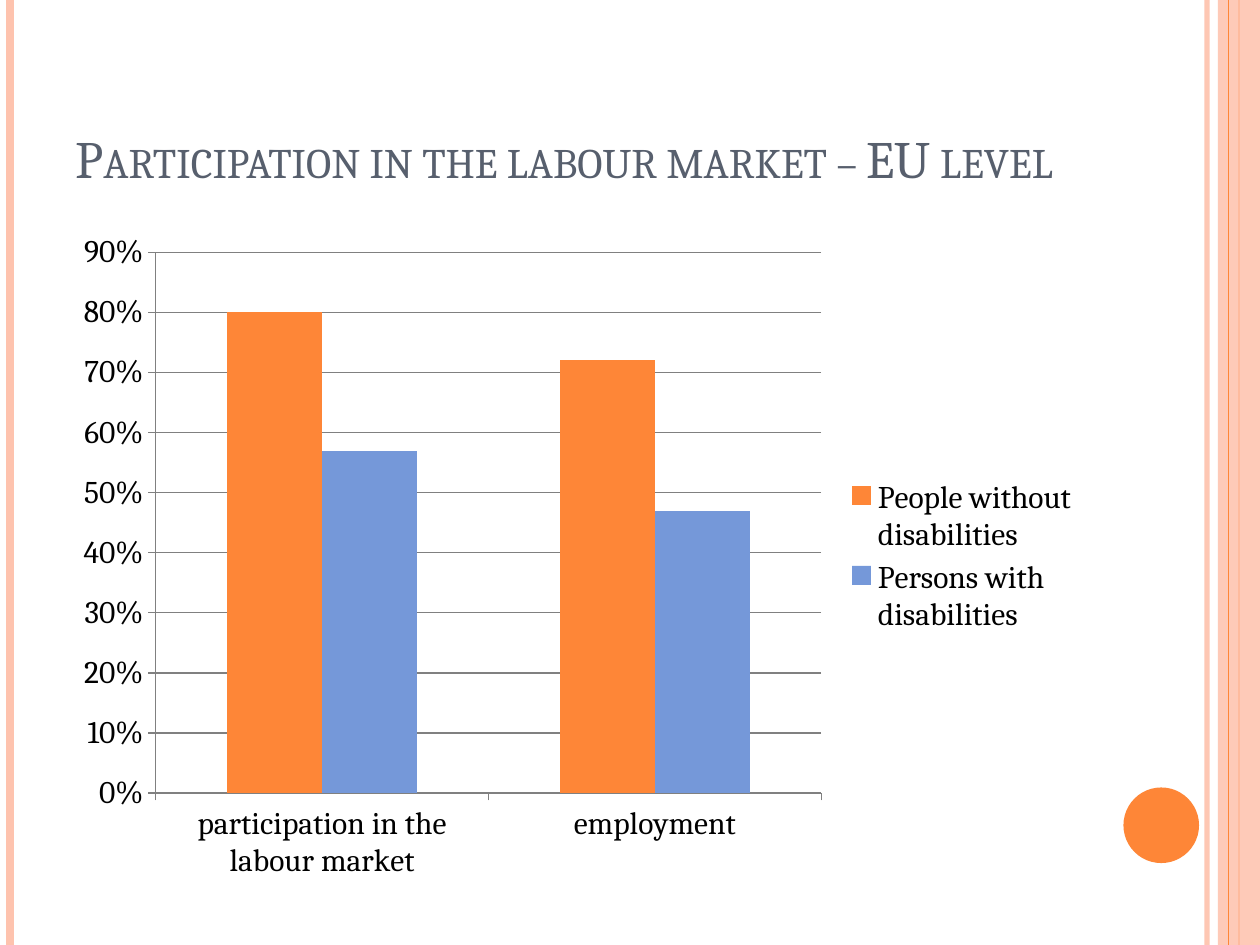
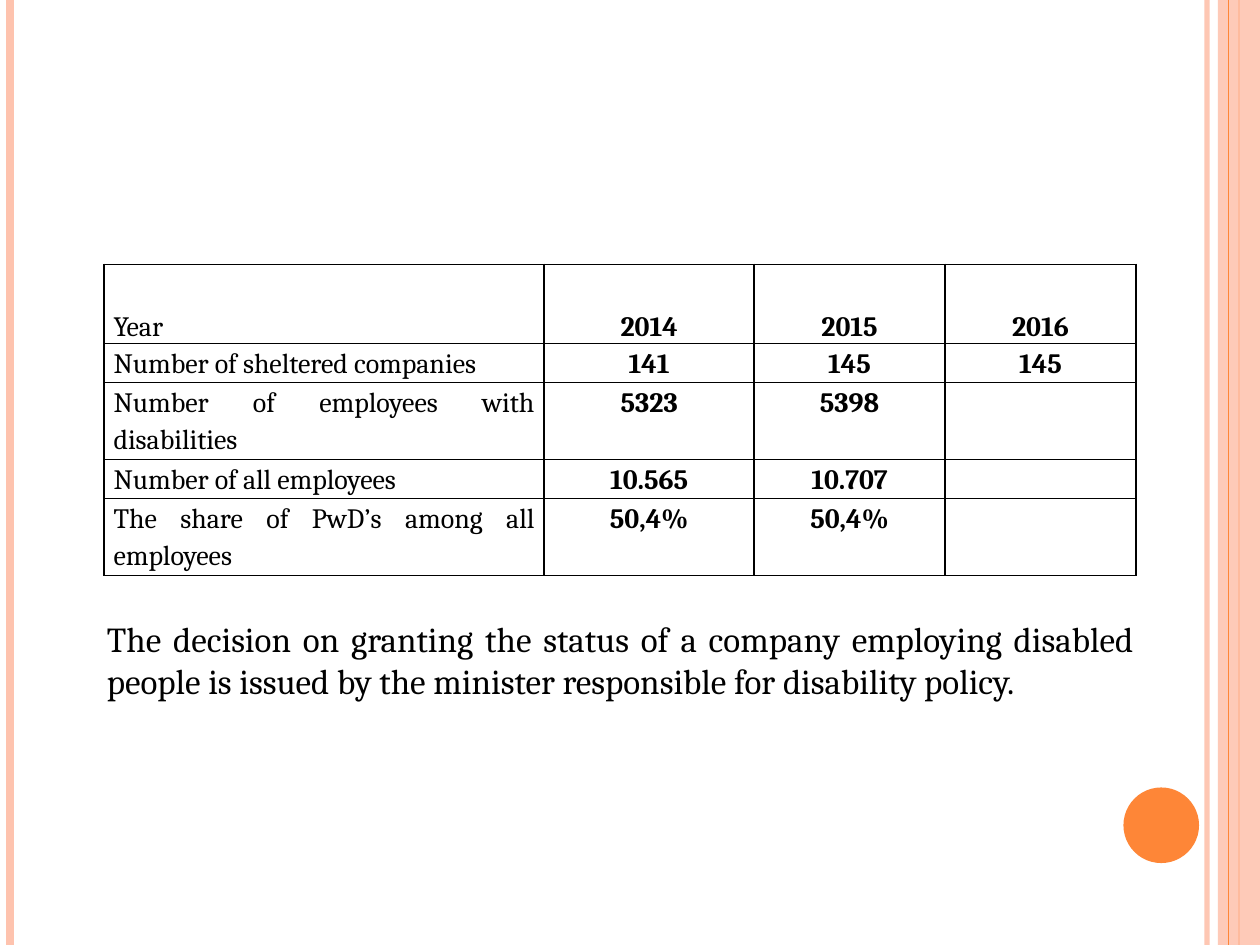
from dataclasses import dataclass
from typing import Any

import lxml.etree
import pptx
import pptx.chart.data
import pptx.dml.color
import pptx.enum.chart
import pptx.enum.shapes
import pptx.enum.text
import pptx.oxml
import pptx.oxml.ns
import pptx.util

Pt = pptx.util.Pt
qn = pptx.oxml.ns.qn
Align = pptx.enum.text.PP_ALIGN
Anchor = pptx.enum.text.MSO_ANCHOR

COLOURS = {
    "orange": "FE8637",
    "peach": "FEC3AE",
    "blue": "7598D9",
    "title": "575F6D",
    "text": "000000",
    "grid": "808080",
    "background": "FFFFFF",
}
FONT = "Cambria"
SLIDE_WIDTH, SLIDE_HEIGHT = 720, 540


@dataclass(frozen=True)
class Stripe:
    """A full-height line at the edge of the slide."""
    x: float
    weight: float
    colour: str
    opacity: int = 100


STRIPES_BEHIND = [
    Stripe(689.75, 3, "peach", 93),
    Stripe(5.75, 4.5, "peach"),
    Stripe(708, 1.5, "orange"),
]
STRIPE_IN_FRONT = Stripe(702, 0.75, "orange")


def rgb(colour: str) -> pptx.dml.color.RGBColor:
    return pptx.dml.color.RGBColor.from_string(COLOURS[colour])


def set_opacity(properties: Any, percent: int) -> None:
    colour = next(properties.iter(qn("a:srgbClr")))
    lxml.etree.SubElement(colour, qn("a:alpha"), val=str(percent * 1000))


def style_font(font: Any, size: float, colour: str = "text", bold: bool = False) -> None:
    font.name, font.size, font.bold = FONT, Pt(size), bold
    font.color.rgb = rgb(colour)


# Shared frame of every slide
def add_stripe(slide: Any, stripe: Stripe) -> None:
    line = slide.shapes.add_connector(
        pptx.enum.shapes.MSO_CONNECTOR.STRAIGHT,
        Pt(stripe.x), Pt(0), Pt(stripe.x), Pt(SLIDE_HEIGHT))
    line.line.width = Pt(stripe.weight)
    line.line.color.rgb = rgb(stripe.colour)
    properties = line._element.spPr
    if stripe.opacity < 100:
        set_opacity(properties, stripe.opacity)
    lxml.etree.SubElement(properties, qn("a:effectLst"))


def add_plain_shape(slide: Any, kind: Any, left: float, top: float, width: float,
                    height: float, colour: str, opacity: int = 100) -> None:
    shape = slide.shapes.add_shape(kind, Pt(left), Pt(top), Pt(width), Pt(height))
    shape.shadow.inherit = False
    shape.fill.solid()
    shape.fill.fore_color.rgb = rgb(colour)
    shape.line.fill.background()
    if opacity < 100:
        set_opacity(shape._element.spPr, opacity)


def add_framed_slide(deck: Any) -> Any:
    slide = deck.slides.add_slide(deck.slide_layouts[6])
    slide.background.fill.solid()
    slide.background.fill.fore_color.rgb = rgb("background")
    kinds = pptx.enum.shapes.MSO_SHAPE
    for stripe in STRIPES_BEHIND:
        add_stripe(slide, stripe)
    add_plain_shape(slide, kinds.RECTANGLE, 696, 0, SLIDE_WIDTH - 696, SLIDE_HEIGHT, "peach", 87)
    add_stripe(slide, STRIPE_IN_FRONT)
    add_plain_shape(slide, kinds.OVAL, 642, 450, 43.2, 43.2, "orange")
    return slide


def add_text(slide: Any, text: str, left: float, top: float, width: float, height: float,
             size: float, colour: str = "text", align: Any = Align.LEFT,
             anchor: Any = Anchor.TOP) -> Any:
    frame = slide.shapes.add_textbox(Pt(left), Pt(top), Pt(width), Pt(height)).text_frame
    frame.word_wrap = True
    frame.vertical_anchor = anchor
    paragraph = frame.paragraphs[0]
    paragraph.text = text
    paragraph.alignment = align
    style_font(paragraph.font, size, colour)
    return paragraph


def add_title(slide: Any, text: str) -> None:
    title = add_text(slide, text, 36, 21.6, 588, 90, 30, "title", anchor=Anchor.BOTTOM)
    title.runs[0]._r.get_or_add_rPr().set("cap", "small")


# Slide 1: participation chart
def add_participation_chart(slide: Any) -> None:
    data = pptx.chart.data.CategoryChartData(number_format="0%")
    data.categories = ["participation in the labour market", "employment"]
    data.add_series("People without disabilities", (0.8, 0.72))
    data.add_series("Persons with disabilities", (0.57, 0.47))
    enums = pptx.enum.chart
    chart = slide.shapes.add_chart(
        enums.XL_CHART_TYPE.COLUMN_CLUSTERED, Pt(36), Pt(126), Pt(588), Pt(384), data).chart
    chart.has_title = False
    style_font(chart.font, 18)
    chart.has_legend = True
    chart.legend.position = enums.XL_LEGEND_POSITION.RIGHT
    chart.legend.include_in_layout = False

    columns = chart.plots[0]
    columns.gap_width, columns.overlap = 150, 0
    columns.vary_by_categories = False
    for series, colour in zip(columns.series, ("orange", "blue")):
        series.format.fill.solid()
        series.format.fill.fore_color.rgb = rgb(colour)

    share_axis = chart.value_axis
    share_axis.minimum_scale, share_axis.maximum_scale, share_axis.major_unit = 0, 0.9, 0.1
    share_axis.tick_labels.number_format = "0%"
    share_axis.tick_labels.number_format_is_linked = False
    share_axis.has_major_gridlines = True
    for axis in (share_axis, chart.category_axis):
        axis.major_tick_mark = enums.XL_TICK_MARK.OUTSIDE
    for part in (share_axis, chart.category_axis, share_axis.major_gridlines):
        part.format.line.color.rgb = rgb("grid")
        part.format.line.width = Pt(0.75)


# Slide 2: sheltered companies table
COMPANY_ROWS = [
    ("Year", "2014", "2015", "2016"),
    ("Number of sheltered companies", "141", "145", "145"),
    ("Number of employees with disabilities", "5323", "5398", ""),
    ("Number of all employees", "10.565", "10.707", ""),
    ("The share of PwD’s among all employees", "50,4%", "50,4%", ""),
]
COLUMN_WIDTHS = (251.5, 120, 109, 109.2)
ROW_HEIGHTS = (45.4, 22.1, 44.2, 22.1, 44.2)


def add_borders(cell: Any) -> None:
    properties = cell._tc.get_or_add_tcPr()
    for side in ("a:lnL", "a:lnR", "a:lnT", "a:lnB"):
        border = lxml.etree.SubElement(properties, qn(side), w=str(Pt(1)))
        fill = lxml.etree.SubElement(border, qn("a:solidFill"))
        lxml.etree.SubElement(fill, qn("a:srgbClr"), val=COLOURS["text"])


def fill_cell(cell: Any, text: str, is_label: bool, is_header: bool) -> None:
    add_borders(cell)
    cell.fill.background()
    cell.margin_left = cell.margin_right = Pt(5.4)
    cell.margin_top = cell.margin_bottom = Pt(0)
    cell.vertical_anchor = Anchor.BOTTOM if is_header else Anchor.TOP
    paragraph = cell.text_frame.paragraphs[0]
    style_font(paragraph.font, 16, bold=not is_label)
    if text:
        paragraph.text = text
        paragraph.alignment = Align.JUSTIFY if is_label else Align.CENTER
        paragraph.line_spacing = 1.15


def add_company_table(slide: Any) -> None:
    table = slide.shapes.add_table(
        len(COMPANY_ROWS), len(COLUMN_WIDTHS), Pt(59.5), Pt(151),
        Pt(sum(COLUMN_WIDTHS)), Pt(sum(ROW_HEIGHTS))).table
    table.first_row = table.horz_banding = False
    for column, width in zip(table.columns, COLUMN_WIDTHS):
        column.width = Pt(width)
    for row, height in zip(table.rows, ROW_HEIGHTS):
        row.height = Pt(height)
    for r, values in enumerate(COMPANY_ROWS):
        for c, value in enumerate(values):
            fill_cell(table.cell(r, c), value, is_label=c == 0, is_header=r == 0)


def main() -> None:
    deck = pptx.Presentation()
    deck.slide_width, deck.slide_height = Pt(SLIDE_WIDTH), Pt(SLIDE_HEIGHT)

    participation = add_framed_slide(deck)
    add_title(participation, "Participation in the labour market – EU level")
    add_participation_chart(participation)

    companies = add_framed_slide(deck)
    add_company_table(companies)
    add_text(companies,
             "The decision on granting the status of a company employing disabled people "
             "is issued by the minister responsible for disability policy.",
             54, 349.2, 601.2, 80, 20, align=Align.JUSTIFY)

    deck.save("out.pptx")


if __name__ == "__main__":
    main()
